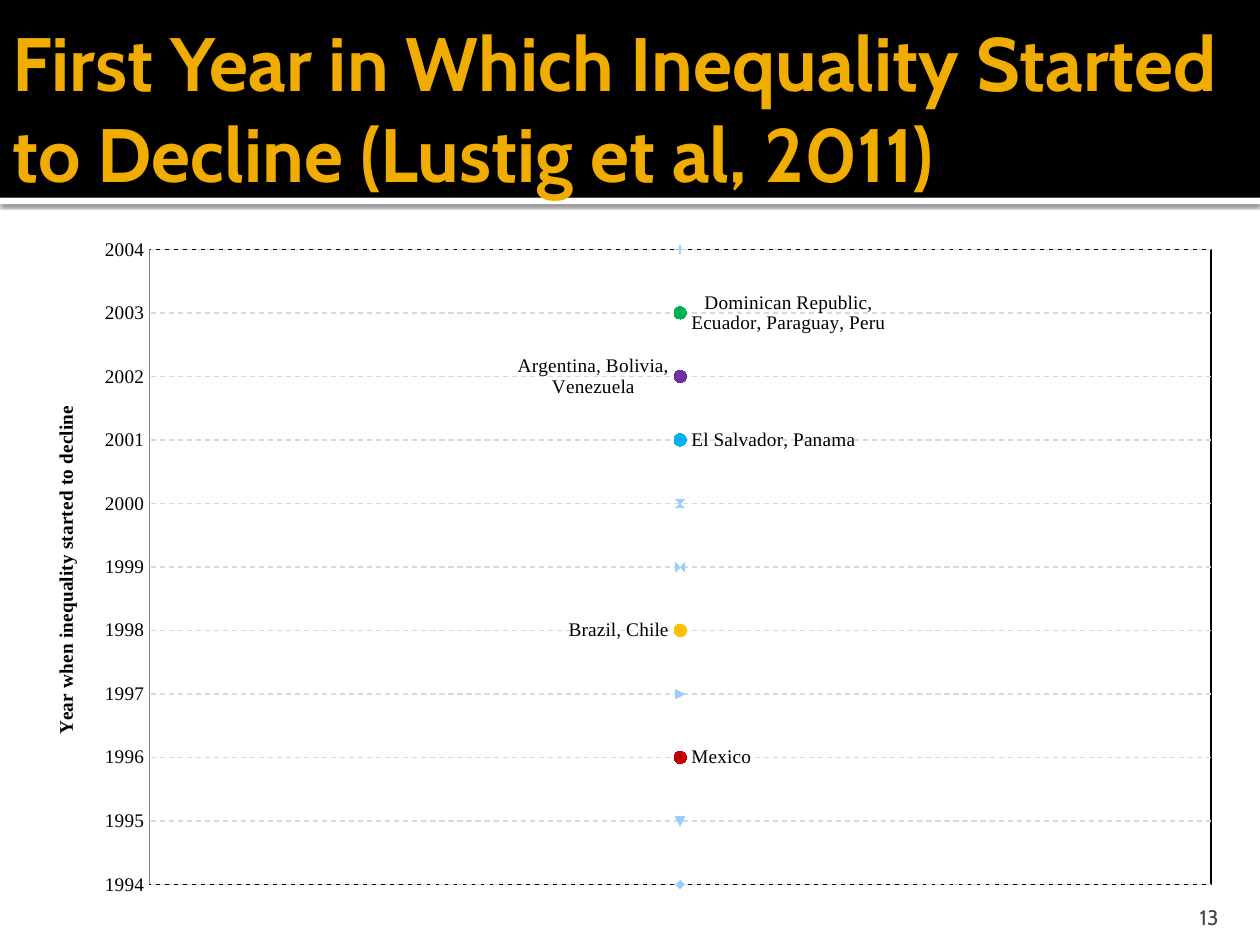
from lxml.etree import SubElement
from pptx import Presentation
from pptx.chart.data import XyChartData
from pptx.chart.datalabel import DataLabels
from pptx.dml.color import RGBColor
from pptx.enum.chart import XL_CHART_TYPE as ChartType
from pptx.enum.chart import XL_LABEL_POSITION as LabelPosition
from pptx.enum.chart import XL_MARKER_STYLE as MarkerStyle
from pptx.enum.chart import XL_TICK_MARK as TickMark
from pptx.enum.dml import MSO_LINE as LineDash
from pptx.enum.shapes import MSO_SHAPE as ShapeType
from pptx.enum.text import MSO_ANCHOR as Anchor
from pptx.enum.text import PP_ALIGN as Align
from pptx.oxml import parse_xml
from pptx.oxml.ns import nsdecls, qn
from pptx.util import Inches, Pt

TITLE = "First Year in Which Inequality Started to Decline (Lustig et al, 2011)"
AXIS_TITLE = "Year when inequality started to decline"
PAGE_NUMBER = "13"
FIRST_YEAR, LAST_YEAR = 1994, 2004
# year: (countries, marker colour, label side)
DECLINES = {
    1996: ("Mexico", "C00000", LabelPosition.RIGHT),
    1998: ("Brazil, Chile", "FFC000", LabelPosition.LEFT),
    2001: ("El Salvador, Panama", "00B0F0", LabelPosition.RIGHT),
    2002: ("Argentina, Bolivia, Venezuela", "7030A0", LabelPosition.LEFT),
    2003: ("Dominican Republic, Ecuador, Paraguay, Peru", "00B050",
           LabelPosition.RIGHT),
}
THEME = {
    "font": "Cabin", "chart_font": "Times New Roman",
    "title_size": 43.2, "number_size": 12, "chart_size": 11,
    "title": "F0AD00", "number": "454545", "band": "000000",
    "paper": "FFFFFF", "ink": "000000", "grid": "D9D9D9",
    "axis": "808080", "empty_year": "99CCFF",
}


def color(name):
    return RGBColor.from_string(THEME.get(name, name))


def paint(format_, fill, line=None, width=0.75):
    format_.fill.solid()
    format_.fill.fore_color.rgb = color(fill)
    if line:
        draw_line(format_.line, line, width)
    else:
        format_.line.fill.background()


def draw_line(line, name, width=0.75):
    line.color.rgb = color(name)
    line.width = Pt(width)


def set_font(font, family, size, name, bold=False):
    font.name = THEME[family]
    font.size = Pt(THEME[size])
    font.color.rgb = color(name)
    font.bold = bold


def add_band(slide, top, height, fill):
    shape = slide.shapes.add_shape(
        ShapeType.RECTANGLE, 0, Inches(top), Inches(10), Inches(height))
    shape.shadow.inherit = False
    paint(shape, fill)
    return shape


def add_text(slide, text, box, size, name, *, bold=False, align=Align.LEFT,
             anchor=Anchor.MIDDLE, insets=(0.1, 0.05, 0.05, 0.05)):
    shape = slide.shapes.add_textbox(*map(Inches, box))
    frame = shape.text_frame
    frame.word_wrap = True
    frame.vertical_anchor = anchor
    (frame.margin_left, frame.margin_top,
     frame.margin_right, frame.margin_bottom) = map(Inches, insets)
    paragraph = frame.paragraphs[0]
    paragraph.alignment = align
    run = paragraph.add_run()
    run.text = text
    set_font(run.font, "font", size, name, bold)


def add_shadow(shape):
    effects = shape._element.spPr.find(qn("a:effectLst"))
    effects.append(parse_xml(
        f'<a:outerShdw {nsdecls("a")} blurRad="{Pt(2.5)}" dist="{Pt(0.8)}" '
        'dir="5400000" algn="t" rotWithShape="0"><a:srgbClr val="000000">'
        '<a:alpha val="60000"/></a:srgbClr></a:outerShdw>'))


def place(element, index, **values):
    """Give a chart part a manual layout, in fractions of the chart."""
    for layout in element.findall(qn("c:layout")):
        element.remove(layout)
    layout = parse_xml(f'<c:layout {nsdecls("c")}><c:manualLayout/></c:layout>')
    for tag, value in values.items():
        SubElement(layout[0], qn(f"c:{tag}")).set("val", str(value))
    element.insert(index, layout)


def add_year_chart(slide):
    data = XyChartData()
    years = range(FIRST_YEAR, LAST_YEAR + 1)
    for number, year in enumerate(years, 1):
        name = DECLINES[year][0] if year in DECLINES else f"Series {number}"
        data.add_series(name).add_data_point(1, year)
    chart = slide.shapes.add_chart(
        ChartType.XY_SCATTER, Inches(0.2), Inches(1.78), Inches(9.61),
        Inches(5.43), data).chart
    chart.has_legend = chart.has_title = False
    set_font(chart.font, "chart_font", "chart_size", "ink")
    for year, series in zip(years, chart.plots[0].series):
        format_series(series, DECLINES.get(year))
    format_axes(chart)
    format_areas(chart)


def format_series(series, decline):
    series.format.line.fill.background()
    marker = series.marker
    if decline is None:
        marker.size = 5
        paint(marker.format, "empty_year")
        return
    _, fill, side = decline
    marker.style, marker.size = MarkerStyle.CIRCLE, 7
    paint(marker.format, fill, fill)
    labels = DataLabels(series._element.get_or_add_dLbls())
    labels.show_series_name, labels.show_value = True, False
    labels.position = side
    set_font(labels.font, "chart_font", "chart_size", "ink")


def format_axes(chart):
    horizontal, vertical = chart.category_axis, chart.value_axis
    for axis, low, high in ((horizontal, 0, 2),
                            (vertical, FIRST_YEAR, LAST_YEAR)):
        axis.minimum_scale, axis.maximum_scale = low, high
        axis.major_unit = 1
        axis.major_tick_mark = axis.minor_tick_mark = TickMark.NONE
    horizontal.has_major_gridlines = False
    horizontal.visible = False
    vertical.has_major_gridlines = True
    grid = vertical.major_gridlines.format.line
    draw_line(grid, "grid")
    grid.dash_style = LineDash.DASH
    draw_line(vertical.format.line, "axis")
    set_font(vertical.tick_labels.font, "chart_font", "chart_size", "ink")

    frame = vertical.axis_title.text_frame
    run = frame.paragraphs[0].add_run()
    run.text = AXIS_TITLE
    set_font(run.font, "chart_font", "chart_size", "ink", bold=True)
    body = frame._txBody.find(qn("a:bodyPr"))
    body.set("rot", "-5400000")
    body.set("vert", "horz")
    place(vertical.axis_title._element, 1,
          xMode="edge", yMode="edge", x=0.02, y=0.26)


def format_areas(chart):
    space = chart._chartSpace
    plot_area = space.chart.plotArea
    place(plot_area, 0, layoutTarget="inner", xMode="edge", yMode="edge",
          x=0.102, y=0.036, w=0.878, h=0.93)

    def area(line):
        return parse_xml(
            f'<c:spPr {nsdecls("c", "a")}><a:solidFill><a:srgbClr '
            f'val="{THEME["paper"]}"/></a:solidFill><a:ln w="{Pt(0.75)}">'
            f'<a:solidFill><a:srgbClr val="{THEME[line]}"/></a:solidFill>'
            '</a:ln></c:spPr>')

    plot_area.append(area("ink"))
    space.chart.addnext(area("paper"))


def main():
    presentation = Presentation()
    presentation.slide_width, presentation.slide_height = Inches(10), Inches(7.5)
    slide = presentation.slides.add_slide(presentation.slide_layouts[6])
    add_shadow(add_band(slide, 1.57, 0.05, "paper"))
    add_band(slide, 0, 1.57, "band")
    add_text(slide, TITLE, (0, 0, 10, 1.7), "title_size", "title", bold=True)
    add_text(slide, PAGE_NUMBER, (8.97, 7.08, 0.8, 0.3), "number_size", "number",
             align=Align.RIGHT, anchor=Anchor.BOTTOM, insets=(0.1, 0.05, 0.1, 0))
    add_year_chart(slide)
    presentation.save("out.pptx")


if __name__ == "__main__":
    main()
